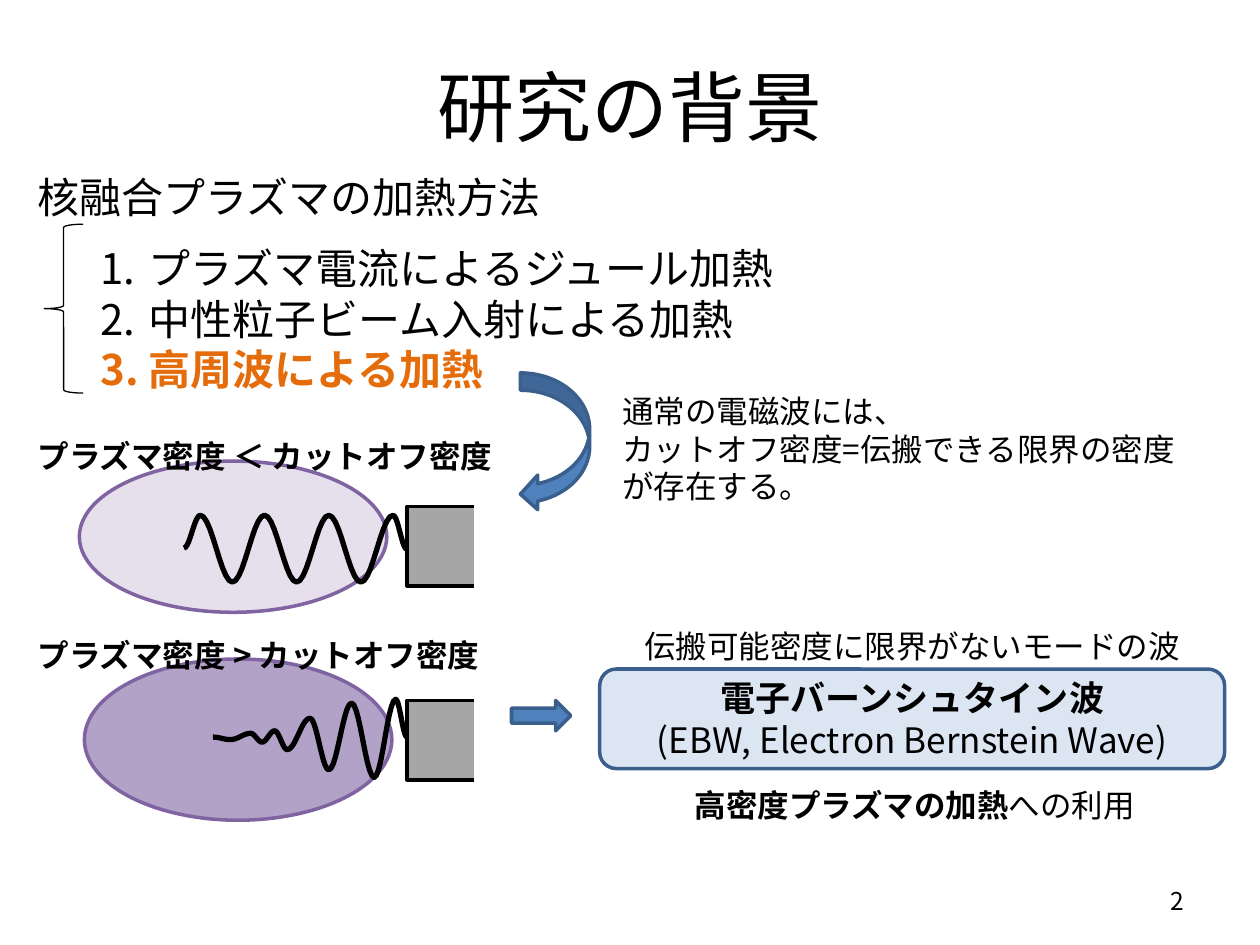
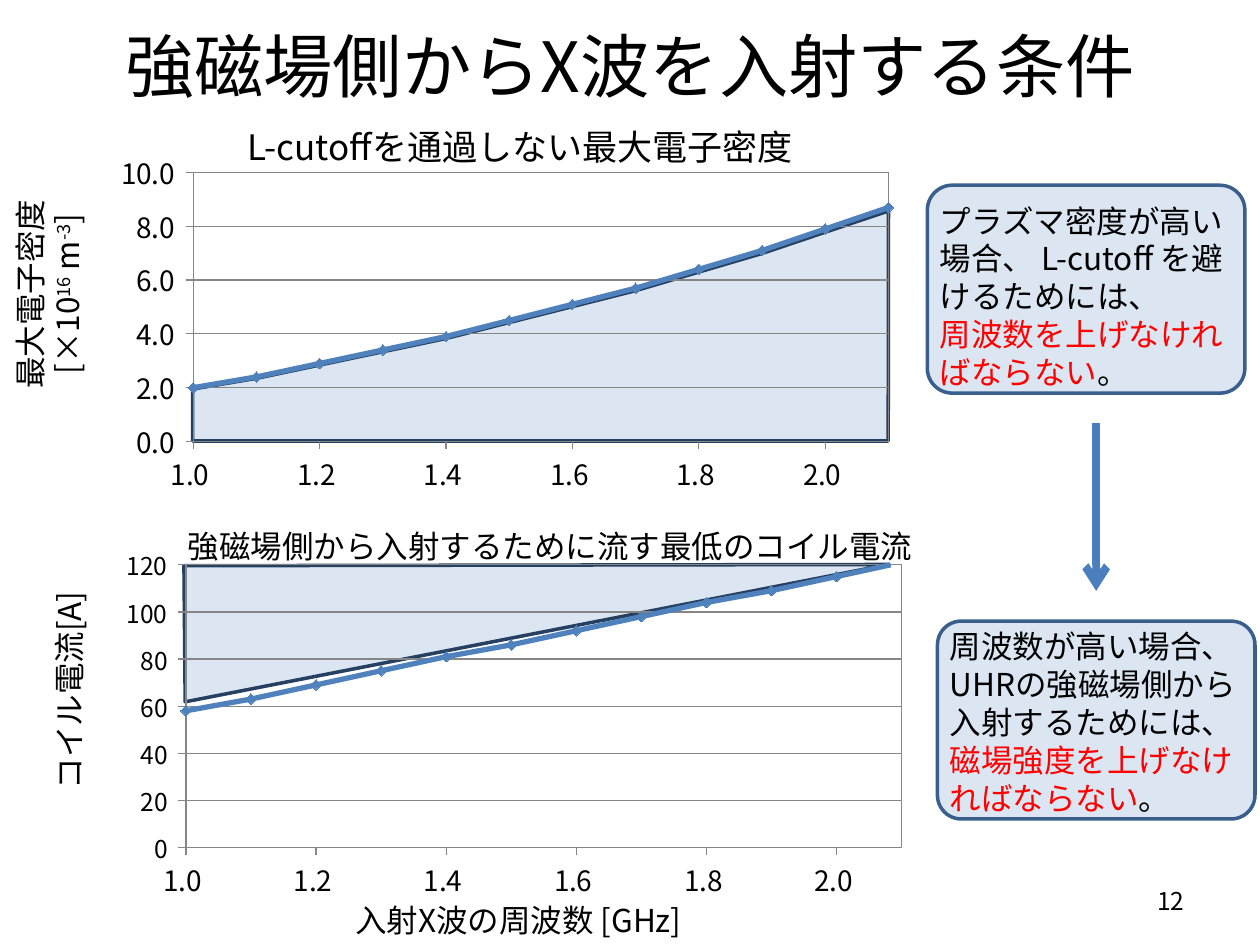
import math

import lxml.etree
import pptx
import pptx.chart.data
import pptx.dml.color
import pptx.enum.chart
import pptx.enum.shapes
import pptx.enum.text
import pptx.oxml
import pptx.oxml.ns
import pptx.util

RGB = pptx.dml.color.RGBColor
BLACK = RGB(0x00, 0x00, 0x00)
WHITE = RGB(0xFF, 0xFF, 0xFF)
GRAY = RGB(0xA6, 0xA6, 0xA6)
GRID_GRAY = RGB(0x86, 0x86, 0x86)
ORANGE = RGB(0xE4, 0x6C, 0x0A)
RED = RGB(0xFF, 0x00, 0x00)
BLUE = RGB(0x4F, 0x81, 0xBD)
ARROW_BLUE = RGB(0x4B, 0x7E, 0xBC)
EDGE_BLUE = RGB(0x3A, 0x5F, 0x8C)
NAVY = RGB(0x25, 0x40, 0x61)
PALE_BLUE = RGB(0xDC, 0xE6, 0xF2)
PURPLE = RGB(0x80, 0x64, 0xA2)
PALE_PURPLE = RGB(0xE6, 0xE0, 0xEC)
MID_PURPLE = RGB(0xB3, 0xA2, 0xC7)

FONT = "Noto Sans CJK JP"
COLS, ROWS = 10, 7.5
CELL = pptx.util.Inches(1)

PP = pptx.enum.text.PP_ALIGN
MIDDLE = pptx.enum.text.MSO_ANCHOR.MIDDLE
MSO = pptx.enum.shapes.MSO_SHAPE
qn = pptx.oxml.ns.qn

FREQUENCIES = [1 + i / 10 for i in range(12)]
DENSITIES = [2, 2.4, 2.9, 3.4, 3.9, 4.5, 5.1, 5.7, 6.4, 7.1, 7.9, 8.7]
CURRENTS = [58, 63, 69, 75, 81, 86, 92, 98, 104, 109, 115, 121]


def cells(*lengths):
    return [round(n * CELL) for n in lengths]


def add_run(p, text, size=18, color=BLACK, bold=False, baseline=0):
    r = p.add_run()
    r.text = text
    r.font.size = pptx.util.Pt(size)
    r.font.name = FONT
    r.font.bold = bold
    r.font.color.rgb = color
    rPr = r.font._element
    lxml.etree.SubElement(rPr, qn("a:ea")).set("typeface", FONT)
    if baseline:
        rPr.set("baseline", str(baseline * 1000))


def number_paragraph(p):
    pPr = p._p.get_or_add_pPr()
    left, hanging = cells(0.88, -0.38)
    pPr.set("marL", str(left))
    pPr.set("indent", str(hanging))
    lxml.etree.SubElement(pPr, qn("a:buFont")).set("typeface", "+mj-lt")
    lxml.etree.SubElement(pPr, qn("a:buAutoNum")).set("type", "arabicPeriod")


def add_text(shapes, box, *paragraphs, align=PP.LEFT, anchor=None,
             rotation=0, numbered_from=None, **style):
    sp = shapes.add_textbox(*cells(*box))
    sp.rotation = rotation
    tf = sp.text_frame
    tf.word_wrap = True
    tf.vertical_anchor = anchor
    for i, runs in enumerate(paragraphs):
        p = tf.paragraphs[0] if i == 0 else tf.add_paragraph()
        p.alignment = align
        if numbered_from is not None and i >= numbered_from:
            if i == numbered_from:
                p.space_before = pptx.util.Pt(12)
            number_paragraph(p)
        for run in [runs] if isinstance(runs, str) else runs:
            text, own = (run, {}) if isinstance(run, str) else run
            add_run(p, text, **{**style, **own})


def paint(sp, fill, line, width=2):
    sp.shadow.inherit = False
    if fill is None:
        sp.fill.background()
    else:
        sp.fill.solid()
        sp.fill.fore_color.rgb = fill
    sp.line.color.rgb = line
    sp.line.width = pptx.util.Pt(width)


def add_shape(shapes, kind, box, fill, line, width=2, corner=None):
    sp = shapes.add_shape(kind, *cells(*box))
    paint(sp, fill, line, width)
    if corner is not None:
        sp.adjustments[0] = corner


def add_outline(shapes, points, fill, line, width=2):
    start, *rest = [cells(*point) for point in points]
    builder = shapes.build_freeform(*start)
    builder.add_line_segments(rest, close=fill is not None)
    paint(builder.convert_to_shape(), fill, line, width)


def add_wave(shapes, turns, steps=10):
    points = [turns[0]]
    for (x0, y0), (x1, y1) in zip(turns, turns[1:]):
        for i in range(1, steps + 1):
            t = i / steps
            ease = (1 - math.cos(math.pi * t)) / 2
            points.append((x0 + (x1 - x0) * t, y0 + (y1 - y0) * ease))
    add_outline(shapes, points, None, BLACK, 3)


def add_plasma(s, ellipse, fill, turns, antenna_top):
    shapes = s.shapes.add_group_shape().shapes
    add_shape(shapes, MSO.OVAL, ellipse, fill, PURPLE)
    add_wave(shapes, turns)
    add_shape(shapes, MSO.RECTANGLE, (3.23, antenna_top, 0.63, 0.63), GRAY, BLACK)
    add_shape(shapes, MSO.RECTANGLE, (3.78, antenna_top - 0.08, 0.16, 0.79), WHITE, WHITE)


def add_arrow(s, start, end):
    c = s.shapes.add_connector(pptx.enum.shapes.MSO_CONNECTOR.STRAIGHT,
                               *cells(*start, *end))
    c.line.color.rgb = ARROW_BLUE
    c.line.width = pptx.util.Pt(4.5)
    spPr = c.element.spPr
    lxml.etree.SubElement(spPr.find(qn("a:ln")), qn("a:tailEnd")).set("type", "arrow")
    lxml.etree.SubElement(spPr, qn("a:effectLst"))


def clear_fill_xml(line):
    return pptx.oxml.parse_xml(
        f'<c:spPr {pptx.oxml.ns.nsdecls("c", "a")}><a:noFill/><a:ln>{line}</a:ln></c:spPr>')


def set_plot_area(chart, layout):
    space = chart._chartSpace
    area = space.chart.plotArea
    for old in area.findall(qn("c:layout")):
        area.remove(old)
    node = lxml.etree.Element(qn("c:layout"))
    manual = lxml.etree.SubElement(node, qn("c:manualLayout"))
    values = [("layoutTarget", "inner"), ("xMode", "edge"), ("yMode", "edge"),
              *zip("xywh", layout)]
    for name, value in values:
        lxml.etree.SubElement(manual, qn(f"c:{name}")).set("val", str(value))
    area.insert(0, node)
    area.append(clear_fill_xml(
        f'<a:solidFill><a:srgbClr val="{GRID_GRAY}"/></a:solidFill>'))
    space.chart.addnext(clear_fill_xml("<a:noFill/>"))


def format_axis(axis, low, high, step, size, number_format, grid):
    axis.minimum_scale, axis.maximum_scale, axis.major_unit = low, high, step
    axis.has_major_gridlines = grid
    axis.has_title = False
    axis.major_tick_mark = pptx.enum.chart.XL_TICK_MARK.OUTSIDE
    axis.minor_tick_mark = pptx.enum.chart.XL_TICK_MARK.NONE
    axis.tick_labels.number_format = number_format
    axis.tick_labels.number_format_is_linked = False
    font = axis.tick_labels.font
    font.size, font.name = pptx.util.Pt(size), FONT
    font.color.rgb = BLACK
    axis.format.line.color.rgb = GRID_GRAY
    if grid:
        axis.major_gridlines.format.line.color.rgb = GRID_GRAY


def add_scatter(s, box, values, layout, top, step, size, number_format):
    data = pptx.chart.data.XyChartData()
    series = data.add_series("Series 1")
    for x, y in zip(FREQUENCIES, values):
        series.add_data_point(x, y)
    chart = s.shapes.add_chart(pptx.enum.chart.XL_CHART_TYPE.XY_SCATTER_LINES,
                               *cells(*box), data).chart
    chart.has_legend = False
    chart.has_title = False
    chart.font.name = FONT
    chart.font.size = pptx.util.Pt(10)
    chart.font.color.rgb = BLACK
    plot = chart.plots[0]
    plot.vary_by_categories = False
    format_axis(chart.category_axis, 1, 2.1, 0.2, 16, "0.0_ ", False)
    format_axis(chart.value_axis, 0, top, step, size, number_format, True)
    line = plot.series[0].format.line
    line.color.rgb = BLUE
    line.width = pptx.util.Pt(3)
    marker = plot.series[0].marker
    marker.style = pptx.enum.chart.XL_MARKER_STYLE.DIAMOND
    marker.size = 6
    marker.format.fill.solid()
    marker.format.fill.fore_color.rgb = BLUE
    marker.format.line.color.rgb = BLUE
    set_plot_area(chart, layout)


def new_slide(prs, title, number, top, size):
    s = prs.slides.add_slide(prs.slide_layouts[6])
    add_text(s.shapes, (0.5, top, COLS - 1, 1.25), title,
             size=size, align=PP.CENTER, anchor=MIDDLE)
    add_text(s.shapes, (7.17, 6.95, 2.33, 0.4), str(number),
             size=14, align=PP.RIGHT, anchor=MIDDLE)
    return s


def build_background(prs):
    s = new_slide(prs, "研究の背景", 2, 0.21, 44)
    shapes = s.shapes
    add_text(shapes, (0.2, 1.31, 6.14, 1.88),
             "核融合プラズマの加熱方法",
             "プラズマ電流によるジュール加熱",
             "中性粒子ビーム入射による加熱",
             [("高周波による加熱", dict(color=ORANGE, bold=True))],
             size=24, numbered_from=1)
    add_shape(shapes, MSO.LEFT_BRACE, (0.35, 1.78, 0.31, 1.34), None, BLACK, 0.75)

    steady = [(1.59 + 0.255 * i, (4.09, 4.62)[i % 2]) for i in range(7)]
    add_plasma(s, (0.63, 3.66, 2.44, 1.2), PALE_PURPLE,
               [(1.46, 4.35), *steady, (3.23, 4.36)], 4.02)
    growing = [(1.69, 5.85), (1.83, 5.87), (1.99, 5.82), (2.08, 5.89),
               (2.18, 5.8), (2.28, 5.95), (2.46, 5.7), (2.61, 6.11),
               (2.79, 5.58), (2.97, 6.17), (3.14, 5.55), (3.23, 5.85)]
    add_plasma(s, (0.67, 5.23, 2.44, 1.28), MID_PURPLE, growing, 5.56)
    for top, sign in ((3.42, "＜"), (5, ">")):
        add_text(shapes, (0.2, top, 3.98, 0.4),
                 f"プラズマ密度 {sign} カットオフ密度", bold=True)

    add_shape(shapes, MSO.CURVED_LEFT_ARROW, (4.13, 2.96, 0.55, 1.1), BLUE, EDGE_BLUE)
    add_text(shapes, (4.84, 3.06, 4.8, 1.01), "通常の電磁波には、",
             "カットオフ密度=伝搬できる限界の密度", "が存在する。")
    add_shape(shapes, MSO.RIGHT_ARROW, (4.06, 5.56, 0.47, 0.24), BLUE, EDGE_BLUE)

    add_text(shapes, (4.76, 4.93, 4.96, 0.4),
             "伝搬可能密度に限界がないモードの波", align=PP.CENTER)
    add_shape(shapes, MSO.ROUNDED_RECTANGLE, (4.76, 5.31, 4.96, 0.79),
              PALE_BLUE, EDGE_BLUE)
    add_text(shapes, (4.76, 5.32, 4.96, 0.77),
             [("電子バーンシュタイン波", dict(bold=True))],
             "(EBW, Electron Bernstein Wave)", size=20, align=PP.CENTER)
    add_text(shapes, (4.76, 6.19, 5, 0.4),
             [("高密度プラズマの加熱", dict(bold=True)), "への利用"], align=PP.CENTER)


def build_conditions(prs):
    s = new_slide(prs, "強磁場側からX波を入射する条件", 12, -0.11, 39.6)
    shapes = s.shapes
    add_outline(shapes, [(1.46, 4.49), (7.05, 4.48), (1.47, 5.57)], PALE_BLUE, NAVY)
    below_curve = [(1.53 + 0.502 * i, 3.51 - 0.211 * d) for i, d in enumerate(DENSITIES)]
    add_outline(shapes, [(1.53, 3.5), *below_curve, (7.05, 3.5)], PALE_BLUE, NAVY)

    add_scatter(s, (0.67, 4.3, 6.77, 2.91), CURRENTS,
                (0.119, 0.063, 0.839, 0.771), 120, 20, 14, "0_ ")
    add_scatter(s, (0.67, 1.07, 6.69, 3.15), DENSITIES,
                (0.129, 0.095, 0.825, 0.678), 10, 2, 16, "0.0_ ")

    add_text(shapes, (1.06, 4.13, 6.61, 0.4),
             "強磁場側から入射するために流す最低のコイル電流", align=PP.CENTER)
    add_text(shapes, (-0.55, 5.28, 2.2, 0.4), "コイル電流[A]",
             align=PP.CENTER, rotation=270)
    add_text(shapes, (2.72, 7.1, 3.1, 0.4), "入射X波の周波数 [GHz]")
    add_text(shapes, (1.77, 0.95, 4.72, 0.44),
             "L-cutoffを通過しない最大電子密度", size=20, align=PP.CENTER)
    raised = dict(baseline=30)
    add_text(shapes, (-0.87, 1.98, 2.52, 0.71), "最大電子密度",
             ["[×10", ("16", raised), " m", ("-3", raised), "]"],
             align=PP.CENTER, rotation=270)

    for box in ((7.36, 1.47, 2.52, 1.65), (7.44, 4.93, 2.52, 1.57)):
        add_shape(shapes, MSO.ROUNDED_RECTANGLE, box, PALE_BLUE, EDGE_BLUE, corner=0.12)
    red = dict(color=RED)
    add_text(shapes, (7.36, 1.55, 2.68, 1.62),
             "プラズマ密度が高い場合、 L-cutoff を避けるためには、",
             [("周波数を上げなければならない", red), "。"])
    add_text(shapes, (7.44, 4.93, 2.68, 1.62),
             ["周波数が高い場合、UHRの強磁場側から入射するためには、",
              ("磁場強度を上げなければならない", red), "。"])
    add_arrow(s, (8.7, 3.36), (8.7, 4.69))


def main():
    prs = pptx.Presentation()
    prs.slide_width, prs.slide_height = cells(COLS, ROWS)
    build_background(prs)
    build_conditions(prs)
    prs.save("out.pptx")


if __name__ == "__main__":
    main()
